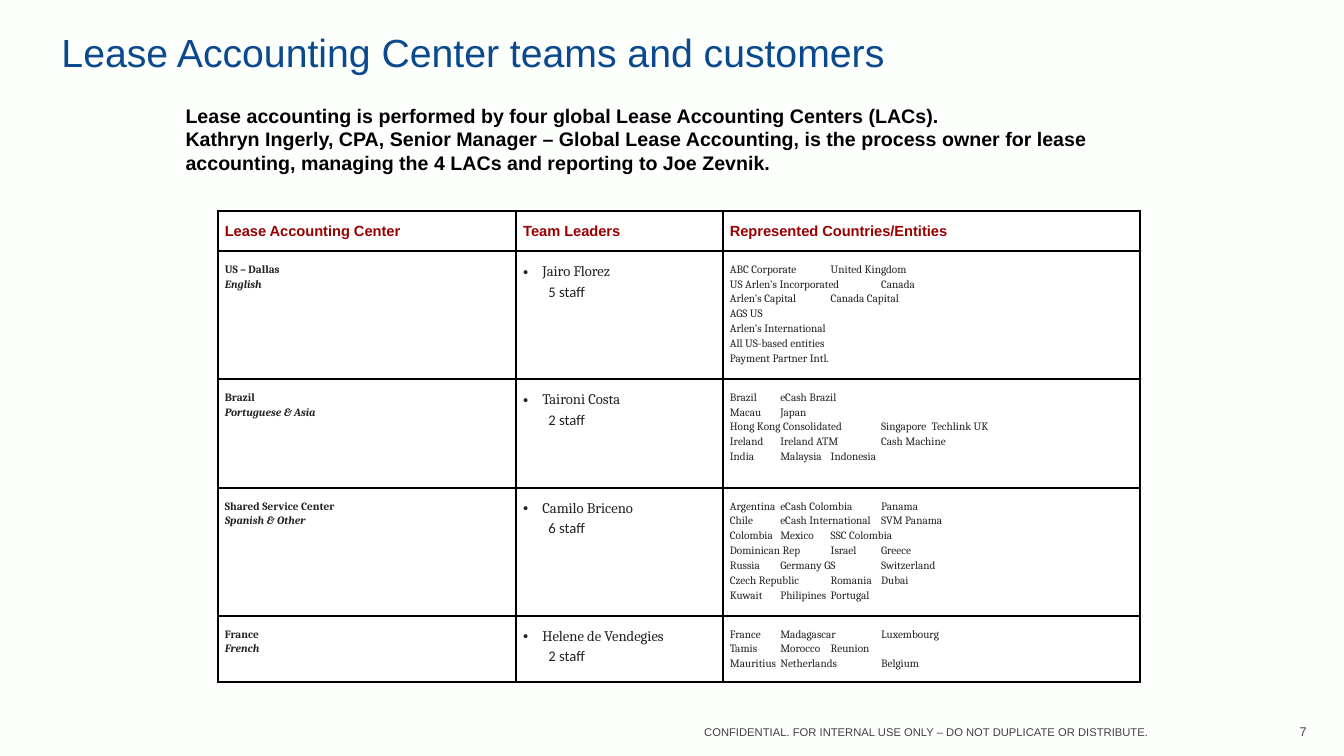
from lxml import etree
from pptx import Presentation
from pptx.dml.color import RGBColor
from pptx.enum.text import MSO_ANCHOR, PP_ALIGN
from pptx.oxml.ns import qn
from pptx.util import Inches, Pt

rgb = RGBColor.from_string


def write(p, text, size, font="Arial", color="222222", bold=False, italic=False,
          align=PP_ALIGN.LEFT, spacing=1.0):
    p.alignment = align
    p.line_spacing = spacing
    r = p.add_run()
    r.text = text
    r.font.name = font
    r.font.size = Pt(size)
    r.font.color.rgb = rgb(color)
    r.font.bold = bold
    r.font.italic = italic


def indent(p, left, first=0, bullet=None, stops=()):
    """Set a paragraph's indents in inches, with its bullet and tab stops."""
    pPr = p._p.get_or_add_pPr()
    pPr.set("marL", str(Inches(left)))
    pPr.set("indent", str(Inches(first)))
    if bullet:
        etree.SubElement(pPr, qn("a:buFont"), typeface="Arial")
        etree.SubElement(pPr, qn("a:buChar"), char=bullet)
    else:
        etree.SubElement(pPr, qn("a:buNone"))
    if stops:
        tabs = etree.SubElement(pPr, qn("a:tabLst"))
        for stop in stops:
            etree.SubElement(tabs, qn("a:tab"), pos=str(Inches(stop)), algn="l")


prs = Presentation()
prs.slide_width, prs.slide_height = Inches(13.33), Inches(7.5)
slide = prs.slides.add_slide(prs.slide_layouts[5])
slide.background.fill.solid()
slide.background.fill.fore_color.rgb = rgb("FDFFFD")

# Title
title = slide.shapes.title
title.left, title.top = Inches(0.51), Inches(0.27)
title.width, title.height = Inches(12.14), Inches(0.53)
title.text_frame.vertical_anchor = MSO_ANCHOR.BOTTOM
write(title.text_frame.paragraphs[0], "Lease Accounting Center teams and customers",
      28, color="0A498E", spacing=0.9)

# Introduction, footer and page number
intro = ["Lease accounting is performed by four global Lease Accounting Centers (LACs).",
         "Kathryn Ingerly, CPA, Senior Manager – Global Lease Accounting, is the process owner "
         "for lease accounting, managing the 4 LACs and reporting to Joe Zevnik."]
footer = ["CONFIDENTIAL. FOR INTERNAL USE ONLY – DO NOT DUPLICATE OR DISTRIBUTE."]
boxes = [
    (1.77, 0.96, 9.92, 0.78, 0.07, intro, dict(size=14, color="000000", bold=True)),
    (6.67, 7.15, 5.04, 0.24, 0.05, footer, dict(size=8, color="3F403F", align=PP_ALIGN.CENTER)),
    (12.43, 7.13, 0.6, 0.25, 0.05, ["7"], dict(size=9, color="3F403F", align=PP_ALIGN.RIGHT)),
]
for left, top, width, height, inset, lines, style in boxes:
    sp = slide.shapes.add_textbox(Inches(left), Inches(top), Inches(width), Inches(height))
    tf = sp.text_frame
    tf.word_wrap = True
    tf.margin_top = tf.margin_bottom = Inches(inset)
    tf.margin_left = tf.margin_right = Inches(0.07)
    for i, line in enumerate(lines):
        write(tf.add_paragraph() if i else tf.paragraphs[0], line, **style)

# Table: each center has its language, leader, staff and entity lines by tab stops
headers = ["Lease Accounting Center", "Team Leaders", "Represented Countries/Entities"]
centers = [
    ("US – Dallas", "English", "Jairo Florez", "5 staff", [
        ([1.54], ["ABC Corporate\tUnited Kingdom"]),
        ([1.47], ["US Arlen’s Incorporated\tCanada"]),
        ([1.54], ["Arlen’s Capital\tCanada Capital", "AGS US", "Arlen’s International",
                  "All US-based entities", "Payment Partner Intl."])]),
    ("Brazil", "Portuguese & Asia", "Taironi Costa", "2 staff", [
        ([1.52], ["Brazil\teCash Brazil"]),
        ([1.59], ["Macau\tJapan"]),
        ([1.48, 2.0], ["Hong Kong Consolidated\tSingapore\tTechlink UK"]),
        ([1.62, 3.0], ["Ireland\tIreland ATM\tCash Machine", "India\tMalaysia\tIndonesia"])]),
    ("Shared Service Center", "Spanish & Other", "Camilo Briceno", "6 staff", [
        ([1.51, 2.86], ["Argentina\teCash Colombia\tPanama",
                        "Chile\teCash International\tSVM Panama"]),
        ([1.51, 2.89], ["Colombia\tMexico\tSSC Colombia"]),
        ([1.51, 3.07], ["Dominican Rep\tIsrael\tGreece"]),
        ([1.59, 3.07], ["Russia\tGermany GS\tSwitzerland"]),
        ([1.59, 2.07], ["Czech Republic\tRomania\tDubai"]),
        ([1.59, 3.07], ["Kuwait\tPhilipines\tPortugal"])]),
    ("France", "French", "Helene de Vendegies", "2 staff", [
        ([1.51, 2.87], ["France\tMadagascar\tLuxembourg", "Tamis\tMorocco\tReunion"]),
        ([1.57, 3.07], ["Mauritius\tNetherlands\tBelgium"])]),
]
heights = [0.39, 1.23, 1.08, 1.23, 0.65]
widths = [2.96, 2.05, 4.14]
table = slide.shapes.add_table(len(heights), len(widths), Inches(2.16), Inches(2.09),
                               Inches(sum(widths)), Inches(sum(heights))).table
table.first_row = table.horz_banding = False
for column, width in zip(table.columns, widths):
    column.width = Inches(width)
for row, height in zip(table.rows, heights):
    row.height = Inches(height)

for cell in table.iter_cells():
    cell.margin_left = cell.margin_right = Inches(0.07)
    cell.margin_top = cell.margin_bottom = Inches(0.1)
    tcPr = cell._tc.get_or_add_tcPr()
    for side in ("lnL", "lnR", "lnT", "lnB"):
        ln = etree.SubElement(tcPr, qn(f"a:{side}"), w=str(Pt(1.5)))
        fill = etree.SubElement(ln, qn("a:solidFill"))
        etree.SubElement(fill, qn("a:srgbClr"), val="000000")
    cell.fill.solid()
    cell.fill.fore_color.rgb = rgb("FFFFFF")

for c, header in enumerate(headers):
    write(table.cell(0, c).text_frame.paragraphs[0], header, 10.5, color="980000",
          bold=True, spacing=1.15)

for row, (center, language, leader, staff, groups) in enumerate(centers, 1):
    center_tf, leader_tf, entity_tf = [table.cell(row, c).text_frame for c in range(3)]
    write(center_tf.paragraphs[0], center, 8, "Cambria", bold=True, spacing=1.15)
    write(center_tf.add_paragraph(), language, 8, "Cambria", bold=True, italic=True, spacing=1.15)

    p = leader_tf.paragraphs[0]
    indent(p, 0.19, -0.19, bullet="•")
    write(p, leader, 10.5, "Cambria", spacing=1.15)
    p = leader_tf.add_paragraph()
    indent(p, 0.25)
    write(p, staff, 10.5, "Calibri", spacing=1.15)

    entities = [(stops, line) for stops, lines in groups for line in lines]
    for i, (stops, line) in enumerate(entities):
        p = entity_tf.add_paragraph() if i else entity_tf.paragraphs[0]
        indent(p, 0, stops=stops)
        write(p, line, 8, "Cambria", spacing=1.15)

prs.save("out.pptx")
